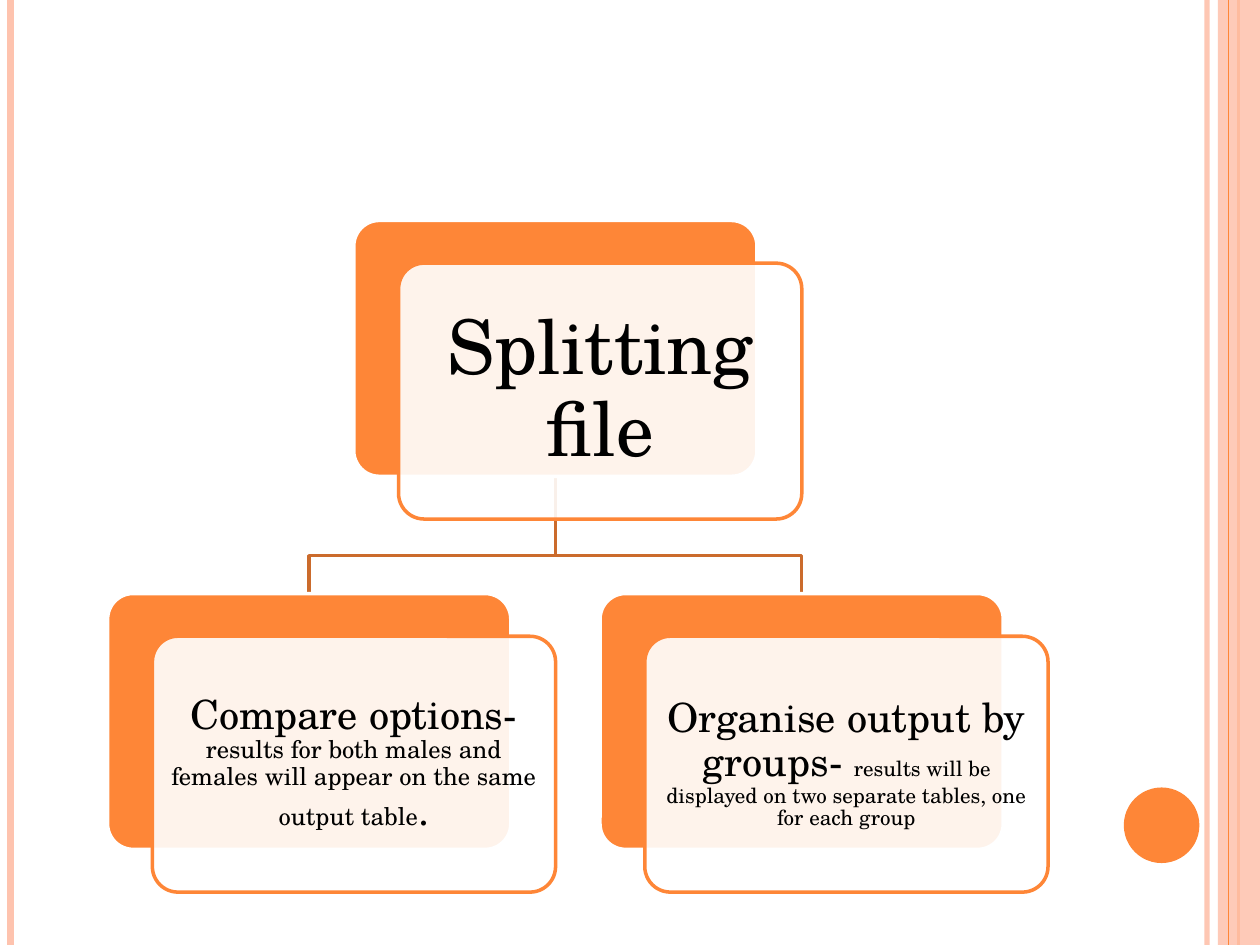
import pptx
import pptx.util
import pptx.dml.color
import pptx.enum.shapes
import pptx.enum.text
import pptx.oxml
import pptx.oxml.ns

Pt = pptx.util.Pt
RGB = pptx.dml.color.RGBColor
KIND = pptx.enum.shapes.MSO_SHAPE
ORANGE = RGB(0xFE, 0x86, 0x37)
PINK = RGB(0xFE, 0xC3, 0xAE)
BROWN = RGB(0xCB, 0x6B, 0x2C)
WHITE = RGB(0xFF, 0xFF, 0xFF)
BLACK = RGB(0, 0, 0)
FONT = "TeX Gyre Schola"
WIDE, HIGH = 720, 540
CARD_W, CARD_H = 230.4, 146.2
SHIFT_X, SHIFT_Y = 25.6, 24.4


def fade(fill, share):
    color = fill._xPr.find(".//" + pptx.oxml.ns.qn("a:srgbClr"))
    alpha = color.makeelement(pptx.oxml.ns.qn("a:alpha"), {"val": str(share * 1000)})
    color.append(alpha)


def add_form(slide, kind, box, fill, share=100, edge=None):
    form = slide.shapes.add_shape(kind, *map(Pt, box))
    form.shadow.inherit = False
    form.fill.solid()
    form.fill.fore_color.rgb = fill
    if share < 100:
        fade(form.fill, share)
    if edge is None:
        form.line.fill.background()
    else:
        form.line.color.rgb = edge
        form.line.width = Pt(2)
    return form


def add_rule(slide, x, top, high, color, width, share=100):
    rule = slide.shapes.add_connector(
        pptx.enum.shapes.MSO_CONNECTOR.STRAIGHT, Pt(x), Pt(top), Pt(x), Pt(top + high))
    rule.line.color.rgb = color
    rule.line.width = Pt(width)
    if share < 100:
        fade(rule.line.fill, share)
    rule._element.spPr.append(pptx.oxml.parse_xml(
        "<a:effectLst %s/>" % pptx.oxml.ns.nsdecls("a")))


def add_frame(slide, left, top, wide, high):
    right = left + wide
    add_rule(slide, right - 30.2, top, high, PINK, 3, 93)
    add_rule(slide, left + 6, top, high, PINK, 4.5)
    add_rule(slide, right - 12.4, top, high, ORANGE, 1.5)
    add_form(slide, KIND.RECTANGLE, (right - 24, top, 24, high), PINK, 87)
    add_rule(slide, right - 18, top, high, ORANGE, 0.75)
    add_form(slide, KIND.OVAL, (right - 77.8, top + 450, 43.2, 43.2), ORANGE)


def add_branch(slide, start, end):
    (x1, y1), (x2, y2) = start, end
    bend = y2 - 21.6
    path = slide.shapes.build_freeform(Pt(x1), Pt(y1))
    path.add_line_segments(
        [(Pt(x1), Pt(bend)), (Pt(x2), Pt(bend)), (Pt(x2), Pt(y2))], close=False)
    branch = path.convert_to_shape()
    branch.shadow.inherit = False
    branch.fill.background()
    branch.line.color.rgb = BROWN
    branch.line.width = Pt(2)


def add_card(slide, left, top, runs, inset):
    back = add_form(slide, KIND.ROUNDED_RECTANGLE, (left, top, CARD_W, CARD_H),
                    ORANGE, edge=WHITE)
    front = add_form(slide, KIND.ROUNDED_RECTANGLE,
                     (left + SHIFT_X, top + SHIFT_Y, CARD_W, CARD_H),
                     WHITE, 90, ORANGE)
    for form in (back, front):
        form.adjustments[0] = 0.1
    frame = front.text_frame
    frame.word_wrap = True
    frame.vertical_anchor = pptx.enum.text.MSO_ANCHOR.MIDDLE
    frame.margin_left = frame.margin_right = Pt(inset)
    frame.margin_top = frame.margin_bottom = Pt(inset)
    para = frame.paragraphs[0]
    para.alignment = pptx.enum.text.PP_ALIGN.CENTER
    para.line_spacing = 0.9
    para.font.name = FONT
    para.font.color.rgb = BLACK
    for text, size in runs:
        run = para.add_run()
        run.text = text
        run.font.size = Pt(size)


def add_tree(slide, left, top, root, leaves):
    gap = 281.4
    root_x = left + gap / 2
    leaf_y = top + 213.2
    spots = [left + gap * i for i in range(len(leaves))]
    start = (root_x + CARD_W / 2, top + CARD_H)
    for x in reversed(spots):
        add_branch(slide, start, (x + CARD_W / 2, leaf_y))
    add_card(slide, root_x, top, root, 8.7)
    for x, runs in zip(spots, leaves):
        add_card(slide, x, leaf_y, runs, 2.9)


def main():
    deck = pptx.Presentation()
    deck.slide_width, deck.slide_height = Pt(WIDE), Pt(HIGH)
    slide = deck.slides.add_slide(deck.slide_layouts[6])
    slide.background.fill.solid()
    slide.background.fill.fore_color.rgb = WHITE
    add_frame(slide, 0, 0, WIDE, HIGH)
    add_tree(slide, 61.5, 126, [("Splitting file", 43)], [
        [("Compare options-", 23),
         ("results for both males and females will appear on the same output table", 14),
         (".", 23)],
        [("Organise output by groups- ", 23),
         ("results will be displayed on two separate tables, one for each group", 12)],
    ])
    deck.save("out.pptx")


if __name__ == "__main__":
    main()
